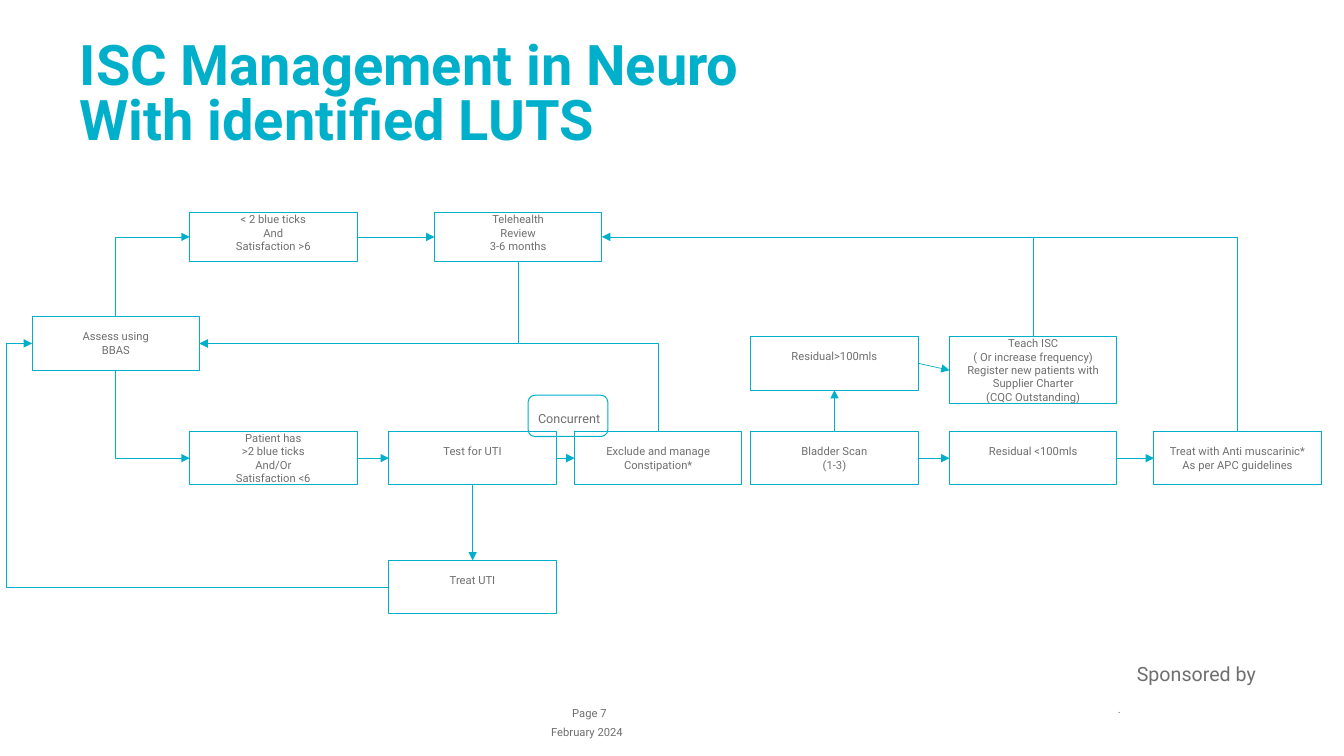
from lxml.etree import SubElement
from pptx import Presentation
from pptx.dml.color import RGBColor
from pptx.enum.shapes import MSO_CONNECTOR as LINK, MSO_SHAPE as SHAPE
from pptx.enum.text import MSO_ANCHOR as ANCHOR, PP_ALIGN as ALIGN
from pptx.oxml.ns import qn
from pptx.util import Cm, Pt

TEAL = RGBColor(0x00, 0xB0, 0xCA)
GREY = RGBColor(0x6F, 0x6F, 0x6F)
FONT = "Roboto"
BOX_W, BOX_H, REVIEW_H, TEACH_H = 4.22, 1.35, 1.22, 1.7
LINE_H = 0.33

TITLE = ["ISC Management in Neuro", "With identified LUTS"]

# name: left, top, height, blank lines above, text
BOXES = {
    "assess": (0.81, 7.98, BOX_H, 1, ["Assess using", "BBAS"]),
    "few ticks": (4.78, 5.36, REVIEW_H, 0, ["< 2 blue ticks", "And", "Satisfaction >6"]),
    "telehealth": (10.95, 5.36, REVIEW_H, 0, ["Telehealth", "Review", "3-6 months"]),
    "many ticks": (4.78, 10.87, BOX_H, 0,
                   ["Patient has", ">2 blue ticks", "And/Or", "Satisfaction <6"]),
    "test": (9.8, 10.87, BOX_H, 1, ["Test for UTI"]),
    "treat": (9.8, 14.12, BOX_H, 1, ["Treat UTI"]),
    "exclude": (14.48, 10.87, BOX_H, 1, ["Exclude and manage", "Constipation*"]),
    "scan": (18.92, 10.87, BOX_H, 1, ["Bladder Scan", "(1-3)"]),
    "high residual": (18.92, 8.48, BOX_H, 1, ["Residual>100mls"]),
    "low residual": (23.93, 10.87, BOX_H, 1, ["Residual <100mls"]),
    "teach": (23.93, 8.48, TEACH_H, 0,
              ["Teach ISC", "( Or increase frequency)", "Register new patients with",
               "Supplier Charter", "(CQC Outstanding)"]),
    "medicate": (29.08, 10.87, BOX_H, 1,
                 ["Treat with Anti muscarinic*", "As per APC guidelines"]),
}

STRAIGHT = [
    ("few ticks", "right", "telehealth", "left"),
    ("many ticks", "right", "test", "left"),
    ("test", "right", "exclude", "left"),
    ("test", "bottom", "treat", "top"),
    ("scan", "top", "high residual", "bottom"),
    ("scan", "right", "low residual", "left"),
    ("low residual", "right", "medicate", "left"),
    ("high residual", "right", "teach", "left"),
]

BENT = [
    ("assess", "top", "few ticks", "left"),
    ("assess", "bottom", "many ticks", "left"),
    ("telehealth", "bottom", "assess", "right"),
    ("exclude", "top", "assess", "right"),
    ("medicate", "top", "telehealth", "right"),
]

# text, left, top, width, height, size, alignment, anchor
LABELS = [
    ("Concurrent", 13.56, 10.36, 2.54, 2.54, 9, ALIGN.LEFT, ANCHOR.TOP),
    ("Sponsored by", 28.65, 16.69, 3.6, 1.07, 14, ALIGN.LEFT, ANCHOR.TOP),
    ("Page 7", 13.56, 17.55, 1.73, 0.58, 8, ALIGN.RIGHT, ANCHOR.BOTTOM),
    ("February 2024", 13.03, 18.03, 3.53, 0.58, 8, ALIGN.CENTER, ANCHOR.BOTTOM),
    (".", 28.17, 17.65, 0.13, 0.38, 8, ALIGN.LEFT, ANCHOR.BOTTOM),
]

prs = Presentation()
prs.slide_width, prs.slide_height = Cm(33.87), Cm(19.05)
s = prs.slides.add_slide(prs.slide_layouts[6])


def set_frame(tf, wrap=True, anchor=ANCHOR.TOP, top=0):
    tf.word_wrap = wrap
    tf.vertical_anchor = anchor
    tf.margin_left = tf.margin_right = tf.margin_bottom = 0
    tf.margin_top = Cm(top)


def add_run(p, text, size, color=GREY, bold=False):
    r = p.add_run()
    r.text = text
    r.font.name, r.font.size, r.font.bold = FONT, Pt(size), bold
    r.font.color.rgb = color


def add_outline(kind, left, top, width, height):
    sp = s.shapes.add_shape(kind, Cm(left), Cm(top), Cm(width), Cm(height))
    sp.shadow.inherit = False
    sp.fill.background()
    sp.line.color.rgb, sp.line.width = TEAL, Pt(0.75)
    return sp


def side_point(name, side):
    left, top, height = BOXES[name][:3]
    fx, fy = {"left": (0, 0.5), "right": (1, 0.5), "top": (0.5, 0), "bottom": (0.5, 1)}[side]
    return left + fx * BOX_W, top + fy * height


def add_link(kind, start, end, arrow=None):
    c = s.shapes.add_connector(kind, *[Cm(v) for v in start + end])
    c.line.color.rgb, c.line.width = TEAL, Pt(0.5)
    if arrow:
        SubElement(c.line._get_or_add_ln(), qn(f"a:{arrow}End"), type="triangle")
    SubElement(c._element.spPr, qn("a:effectLst"))
    return c._element.spPr.find(qn("a:prstGeom"))


tb = s.shapes.add_textbox(Cm(2.01), Cm(1.02), Cm(29.85), Cm(2.9))
set_frame(tb.text_frame)
p = tb.text_frame.paragraphs[0]
p.line_spacing = 0.83
for i, line in enumerate(TITLE):
    if i:
        p.add_line_break()
    add_run(p, line, 40, TEAL, True)

for left, top, height, blank, lines in BOXES.values():
    tf = add_outline(SHAPE.RECTANGLE, left, top, BOX_W, height).text_frame
    set_frame(tf, wrap=False, top=blank * LINE_H)
    for i, line in enumerate(lines):
        p = tf.add_paragraph() if i else tf.paragraphs[0]
        p.alignment = ALIGN.CENTER
        add_run(p, line, 8)
add_outline(SHAPE.ROUNDED_RECTANGLE, 13.31, 9.96, 2.01, 1.04)

for a, a_side, b, b_side in STRAIGHT:
    add_link(LINK.STRAIGHT, side_point(a, a_side), side_point(b, b_side), "tail")

for a, a_side, b, b_side in BENT:
    geom = add_link(LINK.ELBOW, side_point(b, b_side), side_point(a, a_side), "head")
    geom.set("prst", "bentConnector2")

geom = add_link(LINK.ELBOW, side_point("treat", "left"), side_point("assess", "left"), "tail")
guides = geom.find(qn("a:avLst"))
SubElement(guides, qn("a:gd"), name="adj1", fmla="val 107100")

teach_x, teach_y = side_point("teach", "top")
review_y = side_point("telehealth", "right")[1]
add_link(LINK.STRAIGHT, (teach_x, teach_y), (teach_x, review_y))

for text, left, top, width, height, size, align, anchor in LABELS:
    tb = s.shapes.add_textbox(Cm(left), Cm(top), Cm(width), Cm(height))
    set_frame(tb.text_frame, anchor=anchor)
    p = tb.text_frame.paragraphs[0]
    p.alignment = align
    add_run(p, text, size)

prs.save("out.pptx")
